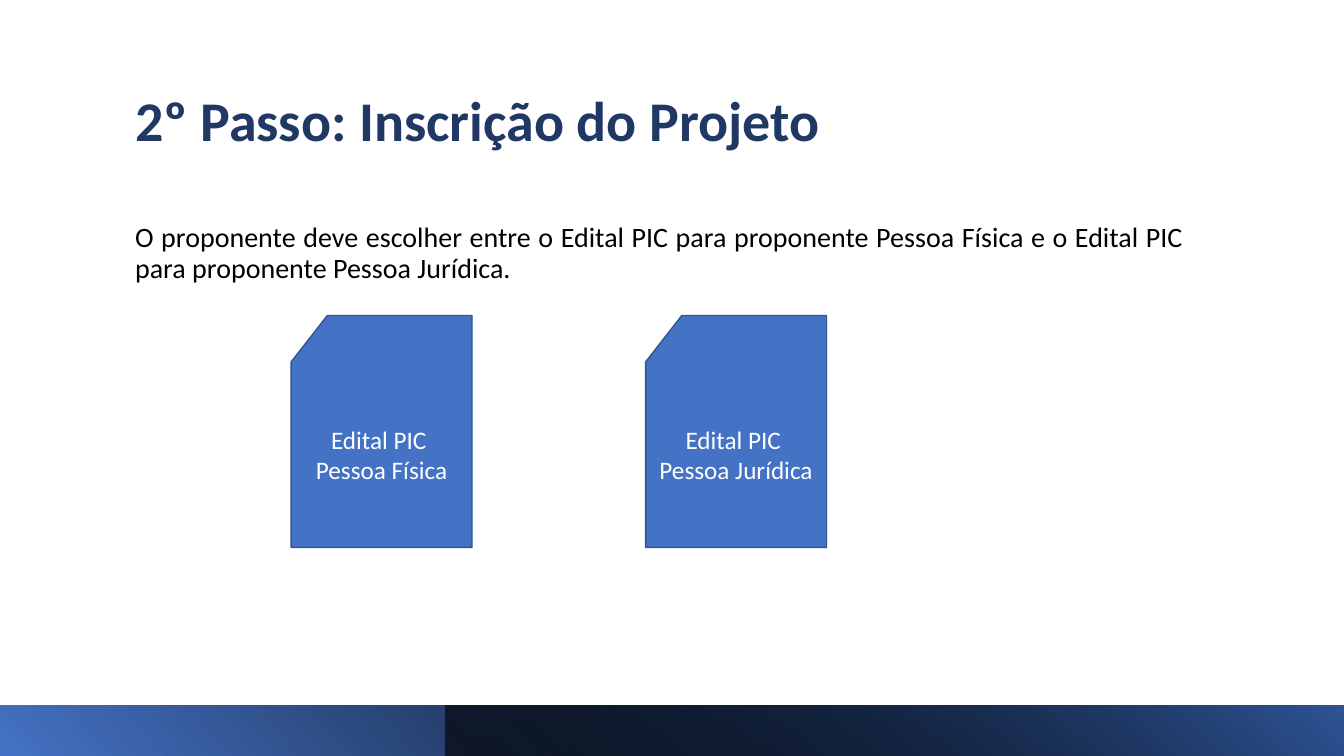
from lxml.etree import SubElement
from pptx import Presentation
from pptx.dml.color import RGBColor
from pptx.enum.shapes import MSO_SHAPE
from pptx.enum.text import MSO_ANCHOR, MSO_AUTO_SIZE, PP_ALIGN
from pptx.oxml.ns import qn
from pptx.util import Pt

NAVY = RGBColor(0x20, 0x38, 0x64)
BLACK = RGBColor(0x00, 0x00, 0x00)
WHITE = RGBColor(0xFF, 0xFF, 0xFF)
BLUE = RGBColor(0x44, 0x72, 0xC4)
DARK_BLUE = RGBColor(0x2F, 0x55, 0x97)
OUTLINE = RGBColor(0x32, 0x54, 0x91)

PAGE_WIDTH, PAGE_HEIGHT = 960, 540
MARGIN, TEXT_WIDTH = 89.28, 763.2
BAND_HEIGHT = 36
CARD_TOP, CARD_WIDTH, CARD_HEIGHT = 225.4, 129.2, 165.6
FIRST_CARD_LEFT, CARD_STEP = 208, 253.2


def place(shape, left, top, width, height):
    shape.left, shape.top = Pt(left), Pt(top)
    shape.width, shape.height = Pt(width), Pt(height)


def format_text(para, size, color, align, bold=False):
    para.alignment = align
    for span in para.runs:
        span.font.name = "Calibri"
        span.font.size = Pt(size)
        span.font.bold = bold
        span.font.color.rgb = color


def fill_placeholder(box, text, top, height, anchor):
    place(box, MARGIN, top, TEXT_WIDTH, height)
    frame = box.text_frame
    frame.text = text
    frame.word_wrap = True
    frame.auto_size = MSO_AUTO_SIZE.NONE
    frame.vertical_anchor = anchor
    para = frame.paragraphs[0]
    para.line_spacing = 0.9
    return para


def remove_bullet(para):
    properties = para._p.get_or_add_pPr()
    properties.set("marL", "0")
    properties.set("indent", "0")
    SubElement(properties, qn("a:buNone"))


def add_band(page, left, angle, stops):
    """Add a gradient band reaching the right edge; stops are (position, color)."""
    band = page.shapes.add_shape(
        MSO_SHAPE.RECTANGLE, Pt(left), Pt(PAGE_HEIGHT - BAND_HEIGHT),
        Pt(PAGE_WIDTH - left), Pt(BAND_HEIGHT))
    band.shadow.inherit = False
    band.line.fill.background()
    band.fill.gradient()
    band.fill.gradient_angle = angle
    for stop, (position, color) in zip(band.fill.gradient_stops, stops):
        stop.position = position
        stop.color.rgb = color
    return band


def set_first_stop_opacity(band, percent):
    color = next(band.element.iter(qn("a:srgbClr")))
    SubElement(color, qn("a:alpha")).set("val", str(percent * 1000))


def add_card(page, left, text):
    card = page.shapes.add_shape(
        MSO_SHAPE.FLOWCHART_CARD, Pt(left), Pt(CARD_TOP),
        Pt(CARD_WIDTH), Pt(CARD_HEIGHT))
    card.shadow.inherit = False
    card.fill.solid()
    card.fill.fore_color.rgb = BLUE
    card.line.color.rgb = OUTLINE
    card.line.width = Pt(1)
    frame = card.text_frame
    frame.text = text
    frame.word_wrap = True
    frame.vertical_anchor = MSO_ANCHOR.MIDDLE
    for para in frame.paragraphs:
        format_text(para, 18, WHITE, PP_ALIGN.CENTER)


def main():
    deck = Presentation()
    deck.slide_width, deck.slide_height = Pt(PAGE_WIDTH), Pt(PAGE_HEIGHT)
    page = deck.slides.add_slide(deck.slide_layouts[1])

    # Title
    title = fill_placeholder(page.shapes.title, "2º Passo: Inscrição do Projeto",
                             28.8, 84.24, MSO_ANCHOR.BOTTOM)
    format_text(title, 40, NAVY, PP_ALIGN.LEFT, bold=True)

    # Instruction
    body = fill_placeholder(
        page.placeholders[1],
        "O proponente deve escolher entre o Edital PIC para proponente "
        "Pessoa Física e o Edital PIC para proponente Pessoa Jurídica. ",
        156.24, 323.28, MSO_ANCHOR.TOP)
    body.space_before = Pt(10)
    remove_bullet(body)
    format_text(body, 20, BLACK, PP_ALIGN.JUSTIFY)

    # Footer bands
    add_band(page, 0, 40, [(0, BLUE), (0.78, BLACK)])
    overlay = add_band(page, 318, 50, [(0, BLACK), (1, DARK_BLUE)])
    set_first_stop_opacity(overlay, 63)

    # Call cards
    for index, applicant in enumerate(["Pessoa Física", "Pessoa Jurídica"]):
        add_card(page, FIRST_CARD_LEFT + index * CARD_STEP,
                 f"Edital PIC \n{applicant}")

    deck.save("out.pptx")


if __name__ == "__main__":
    main()
